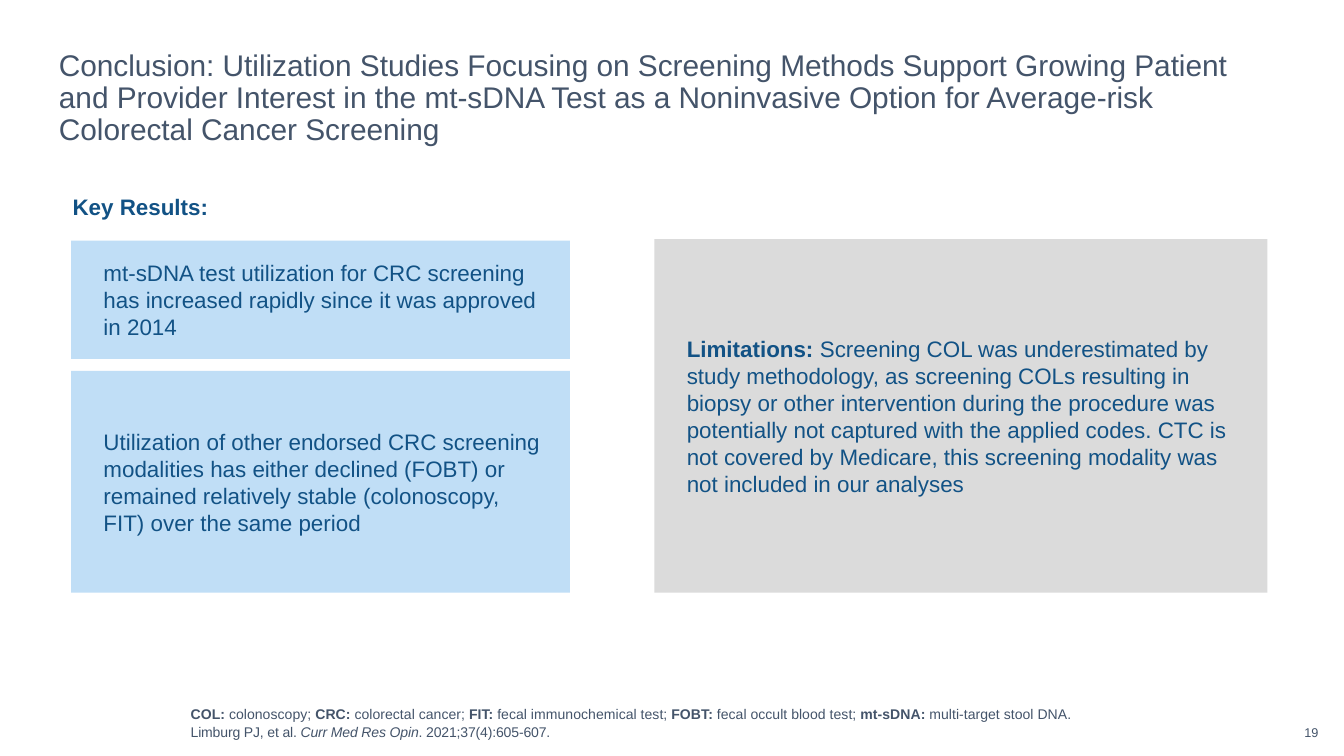
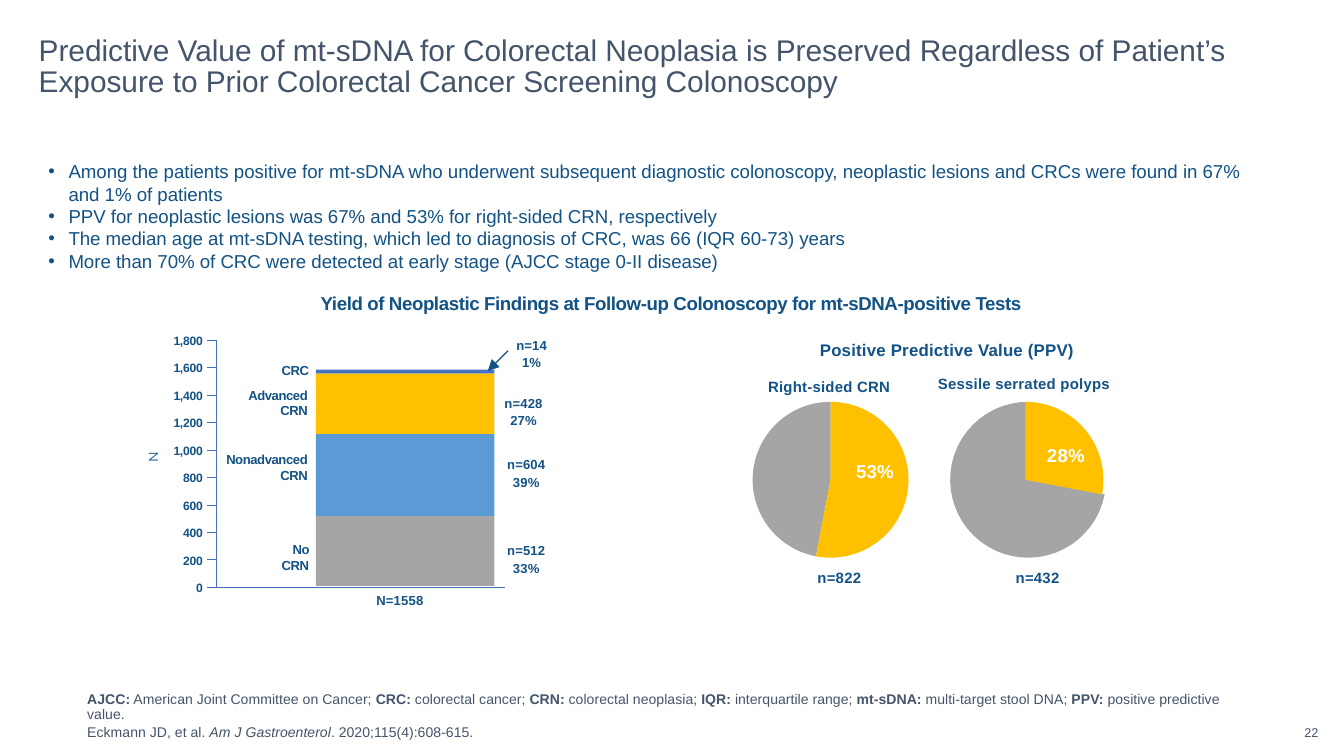
"""Build two slides on mt-sDNA screening results."""
import math
from typing import NamedTuple, Optional

from lxml import etree
from pptx import Presentation
from pptx import util as u
from pptx.dml import color
from pptx.enum import shapes, text
from pptx.oxml import ns

SLATE, NAVY, WHITE = "44546A", "125285", "FFFFFF"
SKY, SILVER = "C0DEF6", "DBDBDB"
GRAY, GOLD, BLUE, ROYAL, AXIS = "A5A5A5", "FFC000", "5B9BD5", "4472C4", "4471C4"
LEFT, MID, RIGHT = text.PP_ALIGN.LEFT, text.PP_ALIGN.CENTER, text.PP_ALIGN.RIGHT
TOP, CENTER, BASE = text.MSO_ANCHOR.TOP, text.MSO_ANCHOR.MIDDLE, text.MSO_ANCHOR.BOTTOM
PAD = (0.1, 0.05, 0.1, 0.05)
CARD = (0.24, 0.05, 0.2, 0.05)
NUDGE = (0, 0.01, 0, 0)


class Para(NamedTuple):
    """A paragraph in which every second part between bars takes the flag."""
    words: str
    size: float = 12
    tint: str = NAVY
    flag: str = "bold"
    align: int = LEFT
    lead: float = 1.0
    before: float = 0
    after: float = 0
    track: float = 0
    bullet: bool = False
    face: str = "Arial"


class Box(NamedTuple):
    """A text box or, with a fill, a card."""
    area: tuple
    paras: list
    inset: tuple = (0, 0, 0, 0)
    anchor: int = TOP
    fill: Optional[str] = None
    turn: str = "horz"


class Bar(NamedTuple):
    """One layer of the stacked column with its two labels."""
    name: str
    spot: tuple
    count: str
    share: str
    place: tuple
    top: float
    height: float
    fill: str


class Pie(NamedTuple):
    """A two-part pie with its heading, share and sample size."""
    share: float
    hub: tuple
    slice: tuple
    head: str
    spot: tuple
    mark: tuple
    count: str
    foot: tuple


def rgb(code: str) -> color.RGBColor:
    """Turn a hex string into a colour."""
    return color.RGBColor.from_string(code)


def apply(target, values: dict) -> None:
    """Set each format value on the target."""
    for key, value in values.items():
        setattr(target, key, value)


def paint(shape, fill: Optional[str], line: Optional[str] = None) -> None:
    """Give a shape its fill and line and drop its shadow."""
    shape.shadow.inherit = False
    if fill:
        shape.fill.solid()
        shape.fill.fore_color.rgb = rgb(fill)
    else:
        shape.fill.background()
    if line:
        shape.line.color.rgb = rgb(line)
        shape.line.width = u.Pt(0.33)
    else:
        shape.line.fill.background()


def dot(para) -> None:
    """Add a hanging bullet to a paragraph."""
    props = para._p.get_or_add_pPr()
    props.set("marL", str(u.Inches(0.15)))
    props.set("indent", str(u.Inches(-0.15)))
    tint = etree.SubElement(props, ns.qn("a:buClr"))
    etree.SubElement(tint, ns.qn("a:srgbClr")).set("val", NAVY)
    etree.SubElement(props, ns.qn("a:buFont")).set("typeface", "Arial")
    etree.SubElement(props, ns.qn("a:buChar")).set("char", "•")


def write(para, item: Para) -> None:
    """Fill a paragraph with its runs."""
    apply(para, {"alignment": item.align, "line_spacing": item.lead,
                 "space_before": u.Pt(item.before), "space_after": u.Pt(item.after)})
    if item.bullet:
        dot(para)
    for part, words in enumerate(item.words.split("|")):
        for row, line in enumerate(words.split("\n")):
            if row:
                para.add_line_break()
            if not line:
                continue
            run = para.add_run()
            run.text = line
            apply(run.font, {"name": item.face, "size": u.Pt(item.size),
                             "bold": False, "italic": False})
            setattr(run.font, item.flag, part % 2 == 1)
            run.font.color.rgb = rgb(item.tint)
            if item.track:
                run._r.get_or_add_rPr().set("spc", str(round(item.track * 100)))


def put(slide, box: Box) -> None:
    """Draw a box with its text."""
    area = [u.Inches(n) for n in box.area]
    if box.fill:
        shape = slide.shapes.add_shape(shapes.MSO_SHAPE.RECTANGLE, *area)
        paint(shape, box.fill)
    else:
        shape = slide.shapes.add_textbox(*area)
    frame = shape.text_frame
    sides = ("margin_left", "margin_top", "margin_right", "margin_bottom")
    apply(frame, {side: u.Inches(n) for side, n in zip(sides, box.inset)})
    apply(frame, {"word_wrap": True, "vertical_anchor": box.anchor})
    frame._txBody.bodyPr.set("vert", box.turn)
    for row, item in enumerate(box.paras):
        write(frame.add_paragraph() if row else frame.paragraphs[0], item)


def trace(slide, points: list, fill: Optional[str] = None, line: Optional[str] = None) -> None:
    """Draw an outline through the points, closed if filled."""
    spots = [(u.Inches(x), u.Inches(y)) for x, y in points]
    form = slide.shapes.build_freeform(*spots[0], scale=1.0)
    form.add_line_segments(spots[1:], close=bool(fill))
    paint(form.convert_to_shape(), fill, line)


def rule(slide, start: tuple, end: tuple, tint: str, width: float, arrow: bool = False) -> None:
    """Draw a straight line, with an arrowhead if asked."""
    ends = [u.Inches(n) for n in start + end]
    line = slide.shapes.add_connector(shapes.MSO_CONNECTOR.STRAIGHT, *ends)
    line.line.color.rgb = rgb(tint)
    line.line.width = u.Pt(width)
    if arrow:
        tip = etree.SubElement(line.line._get_or_add_ln(), ns.qn("a:tailEnd"))
        tip.set("type", "triangle")
    etree.SubElement(line._element.spPr, ns.qn("a:effectLst"))


def start(deck, page: int, title: Box, area: tuple, terms: str, cite: str, track: float = 0):
    """Add a slide with its title, footnote and page number."""
    slide = deck.slides.add_slide(deck.slide_layouts[6])
    note = {"size": 7.5, "tint": SLATE, "lead": 0.85, "before": 2.2}
    put(slide, Box((9.45, 5.41, 0.36, 0.1),
                   [Para(str(page), 6.8, SLATE, align=RIGHT, lead=0.9)], anchor=BASE))
    put(slide, title)
    put(slide, Box(area, [Para(terms, **note), Para(cite, flag="italic", track=track, **note)],
                   (0.1, 0, 0.1, 0), BASE))
    return slide


def wedge(hub: tuple, first: float, last: float) -> list:
    """List the points of a pie slice between two shares of a turn."""
    steps, radius = 40, 0.58
    turns = [2 * math.pi * (first + (last - first) * n / steps) for n in range(steps + 1)]
    return [hub] + [(hub[0] + radius * math.sin(a), hub[1] - radius * math.cos(a)) for a in turns]


def label(slide, area: tuple, words: list, size: float = 7, align: int = MID,
          before: float = 0, track: float = 0.1, tint: str = NAVY, inset: tuple = NUDGE) -> None:
    """Write a small bold label, one paragraph for each entry."""
    put(slide, Box(area, [Para("|" + word, size, tint, align=align, before=before, track=track)
                          for word in words], inset))


def column(slide) -> None:
    """Draw the stacked column with its axis and labels."""
    low, high, count = 4.37, 2.53, 10
    for n in range(count):
        y = high + (low - high) * n / (count - 1)
        rule(slide, (1.54, y), (1.61, y), AXIS, 0.33)
    trace(slide, [(1.61, high), (1.61, low), (3.76, low)], line=AXIS)
    put(slide, Box((1.08, 3.31, 0.15, 0.13), [Para("N", 7, track=-0.1, face="Montserrat")],
                   NUDGE, turn="vert270"))
    put(slide, Box((1.15, 2.41, 0.36, 2.04),
                   [Para(f"|{n:,}", 6.5, align=RIGHT, before=3.9, after=3, track=-0.1)
                    for n in range(1800, -1, -200)], (0, 0.07, 0, 0)))
    label(slide, (2.65, 4.39, 0.65, 0.14), ["N=1558"], inset=(0, 0.02, 0, 0))
    bars = [
        Bar("CRC", (1.96, 2.69, 0.34, 0.12), "n=14", "1%", (3.41, 2.5), 2.75, 0.03, ROYAL),
        Bar("Advanced\nCRN", (1.76, 2.87, 0.53, 0.24), "n=428", "27%", (3.35, 2.93),
            2.78, 0.45, GOLD),
        Bar("Nonadvanced\nCRN", (1.66, 3.35, 0.63, 0.24), "n=604", "39%", (3.37, 3.39),
            3.23, 0.61, BLUE),
        Bar("No CRN", (1.96, 4.02, 0.34, 0.12), "n=512", "33%", (3.37, 4.03),
            3.84, 0.52, GRAY),
    ]
    for bar in bars:
        put(slide, Box((2.35, bar.top, 1.33, bar.height), [], fill=bar.fill))
        label(slide, bar.spot, bar.name.split("\n"), align=RIGHT, track=-0.2)
        label(slide, bar.place + (1.09, 0.26), [bar.count, bar.share], before=0.9)
    rule(slide, (3.78, 2.61), (3.63, 2.76), NAVY, 0.75, arrow=True)


def pair(slide) -> None:
    """Draw the two pies with their labels."""
    pies = [
        Pie(0.53, (6.18, 3.57), (6.18, 3.57), "Right-sided CRN", (5.68, 2.77, 0.98, 0.18),
            (5.95, 3.41), "n=822", (5.87, 4.21, 0.75, 0.15)),
        Pie(0.28, (7.65, 3.57), (7.63, 3.57), "Sessile serrated polyps",
            (6.9, 2.75, 1.44, 0.17), (7.37, 3.29), "n=432", (7.38, 4.21, 0.68, 0.15)),
    ]
    for pie in pies:
        trace(slide, wedge(pie.hub, pie.share, 1), GRAY)
        trace(slide, wedge(pie.slice, 0, pie.share), GOLD)
        label(slide, pie.spot, [pie.head], 8, inset=(0, 0.04, 0, 0))
        label(slide, pie.mark + (1.12, 0.13), [f"{pie.share:.0%}"], 10, tint=WHITE)
        label(slide, pie.foot, [pie.count], 8, inset=(0, 0.02, 0, 0))


def close(deck) -> None:
    """Add the slide with results and limits."""
    title = Box((0.34, 0.45, 9.26, 0.57), [Para(
        "Conclusion: Utilization Studies Focusing on Screening Methods Support Growing Patient "
        "and Provider Interest in the mt-sDNA Test as a Noninvasive Option for Average-risk "
        "Colorectal Cancer Screening", 16, SLATE, lead=0.9)], (0.1, 0.12, 0.1, 0.12), CENTER)
    slide = start(
        deck, 19, title, (1.32, 5.16, 6.75, 0.35),
        "|COL:| colonoscopy; |CRC:| colorectal cancer; |FIT:| fecal immunochemical test; "
        "|FOBT:| fecal occult blood test; |mt-sDNA:| multi-target stool DNA.",
        "Limburg PJ, et al. |Curr Med Res Opin|. 2021;37(4):605-607.", -0.1)
    put(slide, Box((0.54, 1.41, 1.31, 0.35), [Para("|Key Results:", lead=0.9, before=7.5)],
                   (0, 0.05, 0.1, 0.05)))
    cards = [
        ((4.87, 1.78, 4.56, 2.63), SILVER,
         "|Limitations: |Screening COL was underestimated by study methodology, as screening "
         "COLs resulting in biopsy or other intervention during the procedure was potentially "
         "not captured with the applied codes. CTC is not covered by Medicare, this screening "
         "modality was not included in our analyses"),
        ((0.53, 1.79, 3.71, 0.88), SKY,
         "mt-sDNA test utilization for CRC screening has increased rapidly since it was "
         "approved in 2014"),
        ((0.53, 2.76, 3.71, 1.65), SKY,
         "Utilization of other endorsed CRC screening modalities has either declined (FOBT) or "
         "remained relatively stable (colonoscopy, FIT) over the same period"),
    ]
    for area, fill, words in cards:
        put(slide, Box(area, [Para(words)], CARD, CENTER, fill))


def yields(deck) -> None:
    """Add the slide with the column and the pies."""
    title = Box((0.19, 0.23, 9.26, 0.33), [Para(
        "Predictive Value of mt-sDNA for Colorectal Neoplasia is Preserved Regardless of "
        "Patient’s Exposure to Prior Colorectal Cancer Screening Colonoscopy",
        16, SLATE, lead=0.85)], PAD)
    slide = start(
        deck, 22, title, (0.55, 5.16, 8.91, 0.35),
        "|AJCC:| American Joint Committee on Cancer; |CRC:| colorectal cancer; |CRN:| colorectal "
        "neoplasia; |IQR:| interquartile range; |mt-sDNA:| multi-target stool DNA; "
        "|PPV:| positive predictive value.",
        "Eckmann JD, et al. |Am J Gastroenterol|. 2020;115(4):608-615.")
    points = [
        "Among the patients positive for mt-sDNA who underwent subsequent diagnostic "
        "colonoscopy, neoplastic lesions and CRCs were found in 67%\nand 1% of patients",
        "PPV for neoplastic lesions was 67% and 53% for right-sided CRN, respectively",
        "The median age at mt-sDNA testing, which led to diagnosis of CRC, was 66 "
        "(IQR 60-73) years",
        "More than 70% of CRC were detected at early stage (AJCC stage 0-II disease)",
    ]
    put(slide, Box((0.36, 1.19, 9.28, 0.77), [Para(point, 10, bullet=True) for point in points]))
    column(slide)
    pair(slide)
    label(slide, (0.84, 2.12, 8.3, 0.27),
          ["Yield of Neoplastic Findings at Follow-up Colonoscopy for mt-sDNA-positive Tests"],
          10, before=1.1, track=-0.2, inset=PAD)
    label(slide, (5.96, 2.48, 2.17, 0.26), ["Positive Predictive Value (PPV)"], 9, inset=PAD)


def main() -> None:
    """Build and save the deck."""
    deck = Presentation()
    wide = u.Inches(10)
    apply(deck, {"slide_width": wide, "slide_height": wide * 9 // 16})
    close(deck)
    yields(deck)
    deck.save("out.pptx")


if __name__ == "__main__":
    main()
